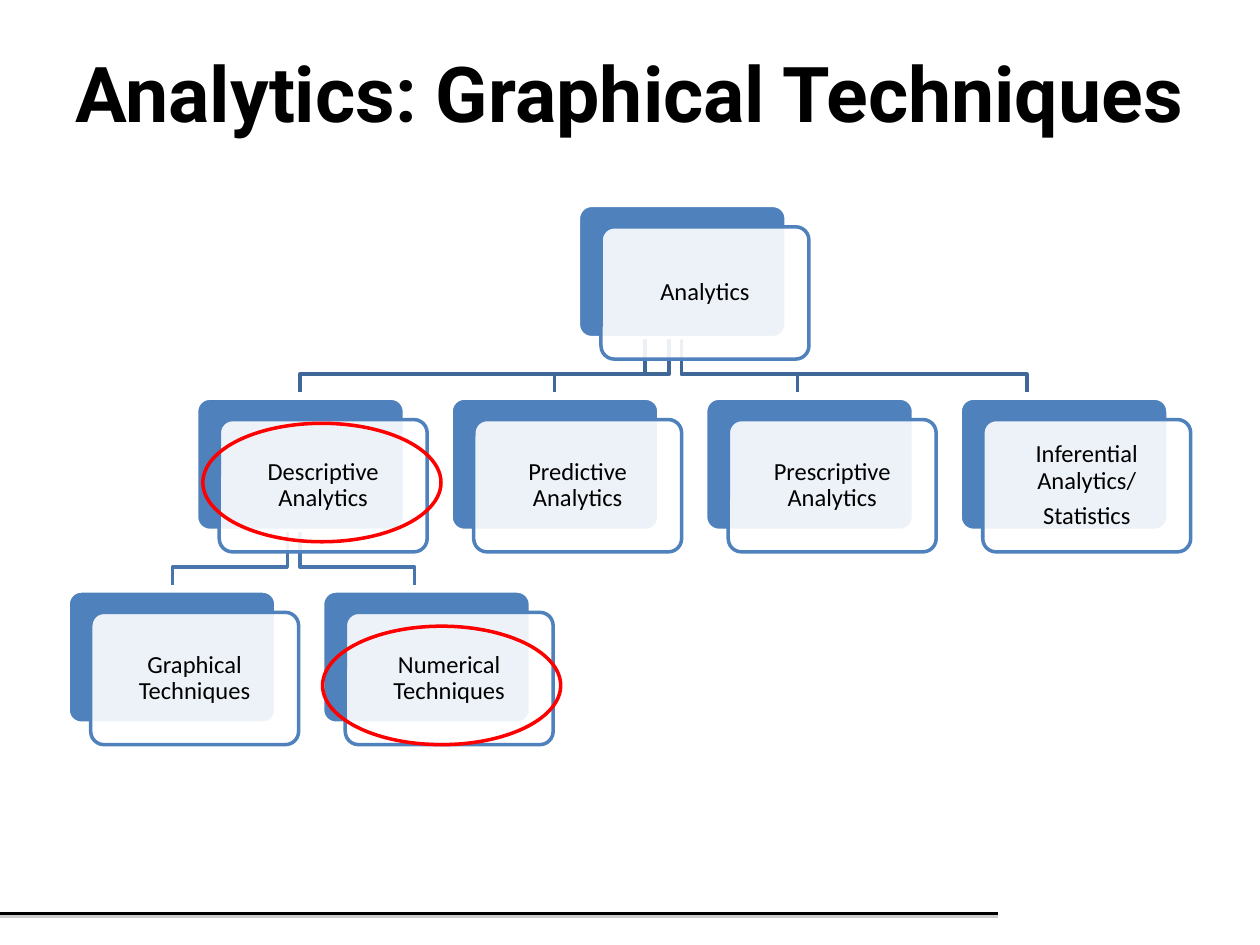
from lxml.etree import SubElement
from pptx import Presentation
from pptx.dml.color import RGBColor
from pptx.enum.shapes import MSO_CONNECTOR, MSO_SHAPE
from pptx.enum.text import MSO_ANCHOR, PP_ALIGN
from pptx.oxml.ns import qn
from pptx.util import Inches, Pt

COLORS = {
    "black": "000000",
    "white": "FFFFFF",
    "blue": "4F81BD",
    "upper_branch": "3F6797",
    "lower_branch": "4875AC",
    "red": "FF0000",
    "shadow": "808080",
}

CARD_WIDTH, CARD_HEIGHT = 1.65, 1.05
FRONT_LEFT, FRONT_TOP = 0.18, 0.17
TREE_TOP, LEVEL_STEP, COLUMN_STEP = 1.63, 1.53, 2.02

LEVELS = [
    (4.59, [["Analytics"]]),
    (1.56, [["Descriptive Analytics"], ["Predictive Analytics"],
            ["Prescriptive Analytics"], ["Inferential Analytics/", "Statistics"]]),
    (0.54, [["Graphical Techniques"], ["Numerical Techniques"]]),
]
BRANCHES = [
    (0, "upper_branch", [(5.41, 8.15), (5.41, 6.33), (5.31, 4.4), (5.12, 2.38)]),
    (1, "lower_branch", [(2.38, 3.29), (2.28, 1.37)]),
]
HIGHLIGHTS = [(1.61, 3.36), (2.56, 4.97)]


def rgb(name):
    return RGBColor.from_string(COLORS[name])


def set_attributes(target, values):
    for name, value in values.items():
        setattr(target, name, value)


def set_line(shape, color, width=2):
    shape.line.color.rgb = rgb(color)
    shape.line.width = Pt(width)


def write_text(shape, lines, frame_format, paragraph_format, font_format):
    frame = shape.text_frame
    set_attributes(frame, {"word_wrap": True, "vertical_anchor": MSO_ANCHOR.MIDDLE,
                           **frame_format})
    for index, line in enumerate(lines):
        paragraph = frame.paragraphs[0] if index == 0 else frame.add_paragraph()
        paragraph.text = line
        set_attributes(paragraph, {"alignment": PP_ALIGN.CENTER, **paragraph_format})
        set_attributes(paragraph.font, font_format)
        paragraph.font.color.rgb = rgb("black")


def add_title(slide, text):
    box = slide.shapes.add_textbox(Inches(0.5), Inches(0.25), Inches(9), Inches(0.95))
    write_text(box, [text], {"margin_left": 0, "margin_right": 0}, {},
               {"name": "Roboto", "size": Pt(44), "bold": True})


def add_footer_line(slide):
    line = slide.shapes.add_connector(MSO_CONNECTOR.STRAIGHT, Inches(7.92), Inches(7.25),
                                      Inches(0), Inches(7.25))
    set_line(line, "black", 1.75)
    effects = SubElement(line._element.spPr, qn("a:effectLst"))
    shadow = SubElement(effects, qn("a:outerShdw"), dist=str(Pt(1.6)), dir="5400000")
    color = SubElement(shadow, qn("a:srgbClr"), val=COLORS["shadow"])
    SubElement(color, qn("a:alpha"), val="38000")


def add_branch(slide, start, end, level, color):
    top = TREE_TOP + level * LEVEL_STEP + CARD_HEIGHT
    bend = top + 0.29
    points = [(start, bend), (end, bend), (end, bend + 0.14)]
    builder = slide.shapes.build_freeform(Inches(start), Inches(top))
    builder.add_line_segments([(Inches(x), Inches(y)) for x, y in points], close=False)
    branch = builder.convert_to_shape()
    branch.shadow.inherit = False
    branch.fill.background()
    set_line(branch, color)


def add_rounded_box(slide, left, top, fill, line):
    box = slide.shapes.add_shape(MSO_SHAPE.ROUNDED_RECTANGLE, Inches(left), Inches(top),
                                 Inches(CARD_WIDTH), Inches(CARD_HEIGHT))
    box.adjustments[0] = 0.1
    box.shadow.inherit = False
    box.fill.solid()
    box.fill.fore_color.rgb = rgb(fill)
    set_line(box, line)
    return box


def add_card(slide, left, top, lines):
    add_rounded_box(slide, left, top, "blue", "white")
    front = add_rounded_box(slide, left + FRONT_LEFT, top + FRONT_TOP, "white", "blue")
    fill_color = front._element.spPr.find(qn("a:solidFill")).find(qn("a:srgbClr"))
    SubElement(fill_color, qn("a:alpha"), val="90000")
    margins = {f"margin_{side}": Inches(0.06) for side in ("left", "top", "right", "bottom")}
    write_text(front, lines, margins, {"line_spacing": 0.9, "space_after": Pt(5)},
               {"name": "Calibri", "size": Pt(14)})


def add_highlight(slide, left, top):
    ellipse = slide.shapes.add_shape(MSO_SHAPE.OVAL, Inches(left), Inches(top),
                                     Inches(1.89), Inches(0.94))
    ellipse.shadow.inherit = False
    ellipse.fill.background()
    set_line(ellipse, "red")


def main():
    presentation = Presentation()
    set_attributes(presentation, {"slide_width": Inches(10), "slide_height": Inches(7.5)})
    slide = presentation.slides.add_slide(presentation.slide_layouts[6])
    add_footer_line(slide)
    add_title(slide, "Analytics: Graphical Techniques")
    for level, color, spans in BRANCHES:
        for start, end in spans:
            add_branch(slide, start, end, level, color)
    for level, (first_left, cards) in enumerate(LEVELS):
        for column, lines in enumerate(cards):
            add_card(slide, first_left + column * COLUMN_STEP,
                     TREE_TOP + level * LEVEL_STEP, lines)
    for left, top in HIGHLIGHTS:
        add_highlight(slide, left, top)
    presentation.save("out.pptx")


if __name__ == "__main__":
    main()
